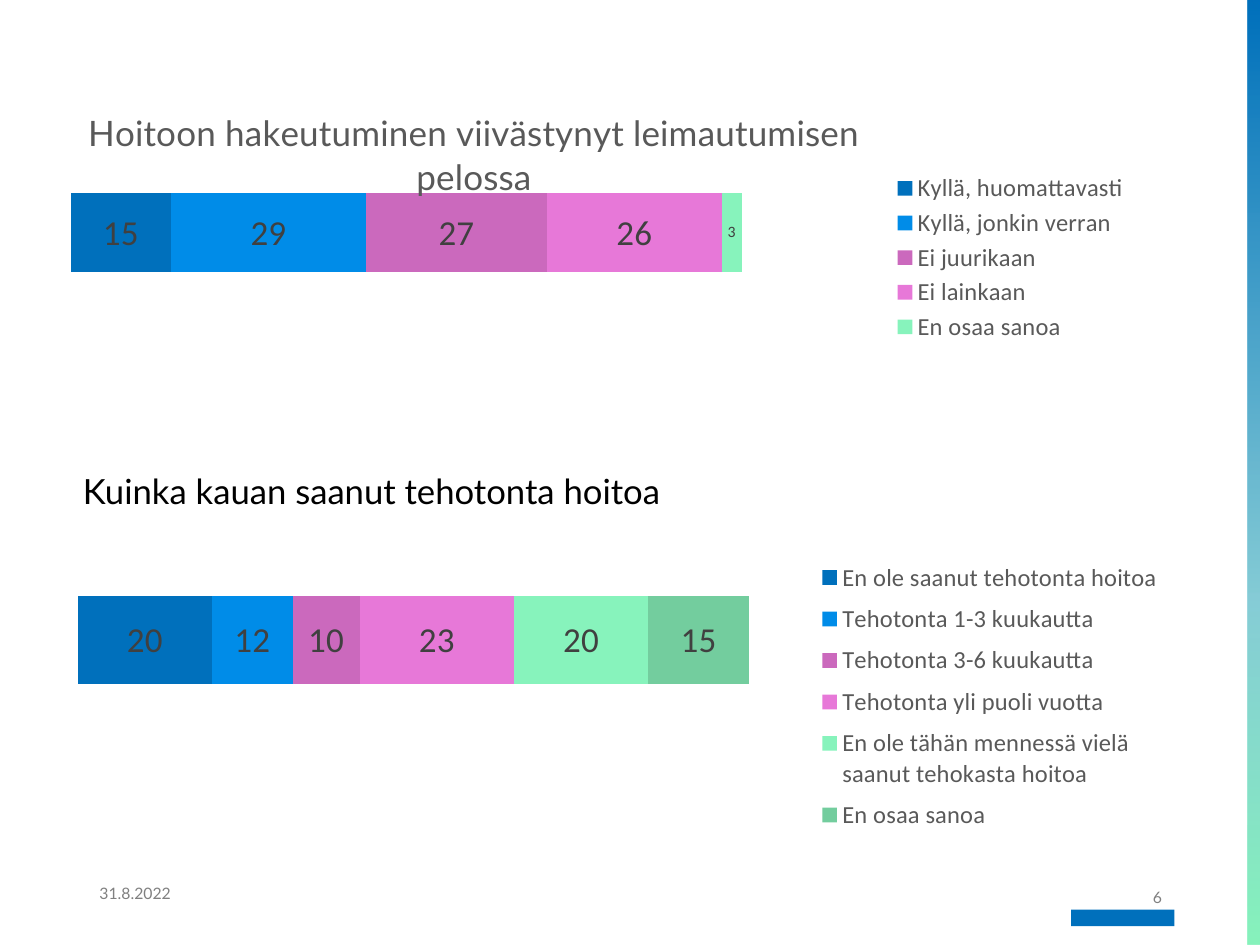
from lxml import etree
from pptx import Presentation
from pptx.chart.data import CategoryChartData
from pptx.dml.color import RGBColor
from pptx.enum.chart import XL_CHART_TYPE as ChartType
from pptx.enum.chart import XL_LABEL_POSITION as LabelPos
from pptx.enum.chart import XL_LEGEND_POSITION as LegendPos
from pptx.enum.shapes import MSO_SHAPE as Shape
from pptx.enum.text import MSO_ANCHOR as Anchor, PP_ALIGN as Align
from pptx.oxml import parse_xml
from pptx.oxml.ns import nsdecls, qn
from pptx.util import Inches, Pt

COLORS = {
    "blue": "0070BC", "sky": "008CE8", "plum": "CB69BD", "pink": "E778D8",
    "mint": "87F3BC", "green": "73CD9E", "teal": "81CBD5", "black": "000000",
    "label": "404040", "legend": "595959", "footer": "808080",
}
SERIES_COLORS = ["blue", "sky", "plum", "pink", "mint", "green"]
EDGE_STOPS = [(0, "blue", 100), (64, "teal", 95), (100, "mint", 100)]

# Layouts are fractions of the chart: left, top, width, height
DELAY_CHART = {
    "box": (0.56, 0.73, 8.88, 2.35),
    "title": "Hoitoon hakeutuminen viivästynyt leimautumisen pelossa",
    "title_at": (0.01, 0.03),
    "answers": [("Kyllä, huomattavasti", 15, 20), ("Kyllä, jonkin verran", 29, 20),
                ("Ei juurikaan", 27, 20), ("Ei lainkaan", 26, 20),
                ("En osaa sanoa", 3, 9)],
    "gap": 55,
    "plot": (0, 0.27, 0.6, 0.41),
    "legend": (0.69, 0.26, 0.3, 0.6),
}
DURATION_CHART = {
    "box": (0.44, 4.05, 8.88, 2.71),
    "title": None,
    "answers": [("En ole saanut tehotonta hoitoa", 20, 20),
                ("Tehotonta 1-3 kuukautta", 12, 20),
                ("Tehotonta 3-6 kuukautta", 10, 20),
                ("Tehotonta yli puoli vuotta", 23, 20),
                ("En ole tähän mennessä vielä saanut tehokasta hoitoa", 20, 20),
                ("En osaa sanoa", 15, 20)],
    "gap": 150,
    "plot": (0.02, 0.06, 0.6, 0.64),
    "legend": (0.68, 0.12, 0.31, 0.85),
}
# text, box, size, colour, alignment, anchor
TEXTS = [
    ("Kuinka kauan saanut tehotonta hoitoa", (0.56, 3.68, 8.62, 0.89), 19.8,
     "black", Align.LEFT, Anchor.TOP),
    ("31.8.2022", (0.69, 6.89, 2.25, 0.4), 9, "footer", Align.LEFT, Anchor.MIDDLE),
    ("6", (7.84, 6.89, 1.48, 0.46), 9, "footer", Align.RIGHT, Anchor.MIDDLE),
]


def rgb(name):
    return RGBColor.from_string(COLORS[name])


def inches(box):
    return [Inches(length) for length in box]


def style_font(font, size, color, face="Calibri"):
    for key, value in {"size": Pt(size), "name": face, "bold": False}.items():
        setattr(font, key, value)
    font.color.rgb = rgb(color)


def add_bar(slide, box):
    bar = slide.shapes.add_shape(Shape.RECTANGLE, *inches(box))
    bar.shadow.inherit = False
    bar.line.fill.background()
    return bar


def set_layout(parent, place, before, inner=False):
    """Place a chart part by hand, ahead of the first sibling named in before."""
    for old in parent.findall(qn("c:layout")):
        parent.remove(old)
    layout = parse_xml(f"<c:layout {nsdecls('c')}><c:manualLayout/></c:layout>")
    settings = [("layoutTarget", "inner")] if inner else []
    settings += [("xMode", "edge"), ("yMode", "edge")]
    settings += zip("xywh", place)
    for tag, value in settings:
        etree.SubElement(layout[0], qn(f"c:{tag}")).set("val", str(value))
    following = [child for child in parent if child.tag in map(qn, before)]
    following[0].addprevious(layout)


def add_survey_chart(slide, survey):
    data = CategoryChartData(number_format="0")
    data.categories = ["1"]
    for answer, percent, _ in survey["answers"]:
        data.add_series(answer, [percent])
    chart = slide.shapes.add_chart(
        ChartType.BAR_STACKED_100, *inches(survey["box"]), data).chart
    style_font(chart.font, 14, "black")

    # Title
    chart.has_title = bool(survey["title"])
    if survey["title"]:
        title = chart.chart_title
        title.text_frame.text = survey["title"]
        style_font(title.text_frame.paragraphs[0].runs[0].font, 20, "legend", "Lato")
        title.include_in_layout = False
        set_layout(title._element, survey["title_at"], ["c:overlay"])

    # Axes and legend
    for axis in (chart.category_axis, chart.value_axis):
        axis.has_major_gridlines = False
        axis.visible = False
    chart.value_axis.maximum_scale = 1
    chart.has_legend = True
    chart.legend.position = LegendPos.RIGHT
    chart.legend.include_in_layout = False
    style_font(chart.legend.font, 14, "legend")
    set_layout(chart.legend._element, survey["legend"], ["c:overlay"])

    # Bars and their values
    plot = chart.plots[0]
    for key, value in {"gap_width": survey["gap"], "overlap": 100,
                       "vary_by_categories": False}.items():
        setattr(plot, key, value)
    set_layout(plot._element.getparent(), survey["plot"], ["c:barChart"], inner=True)
    for series, color, answer in zip(plot.series, SERIES_COLORS, survey["answers"]):
        series.format.fill.solid()
        series.format.fill.fore_color.rgb = rgb(color)
        labels = series.data_labels
        for key, value in {"show_value": True, "position": LabelPos.CENTER,
                           "number_format": "0",
                           "number_format_is_linked": False}.items():
            setattr(labels, key, value)
        style_font(labels.font, answer[2], "label")


def add_text(slide, text, box, size, color, align, anchor):
    frame = slide.shapes.add_textbox(*inches(box)).text_frame
    frame.word_wrap = True
    frame.vertical_anchor = anchor
    paragraph = frame.paragraphs[0]
    paragraph.text = text
    paragraph.alignment = align
    style_font(paragraph.runs[0].font, size, color, "Lato")


def main():
    prs = Presentation()
    prs.slide_width, prs.slide_height = Inches(10), Inches(7.5)
    slide = prs.slides.add_slide(prs.slide_layouts[6])

    # Page number accent
    accent = add_bar(slide, (8.5, 7.22, 0.82, 0.13))
    accent.fill.solid()
    accent.fill.fore_color.rgb = rgb("blue")

    # Gradient along the right edge
    edge = add_bar(slide, (9.9, 0, 0.1, 7.5))
    edge.fill.gradient()
    edge.fill.gradient_angle = 270
    stops = edge._element.spPr.find(qn("a:gradFill")).find(qn("a:gsLst"))
    for old in list(stops):
        stops.remove(old)
    for position, color, opacity in EDGE_STOPS:
        stops.append(parse_xml(
            f'<a:gs {nsdecls("a")} pos="{position * 1000}">'
            f'<a:srgbClr val="{COLORS[color]}">'
            f'<a:alpha val="{opacity * 1000}"/></a:srgbClr></a:gs>'))

    for survey in (DELAY_CHART, DURATION_CHART):
        add_survey_chart(slide, survey)
    for text in TEXTS:
        add_text(slide, *text)
    prs.save("out.pptx")


if __name__ == "__main__":
    main()
